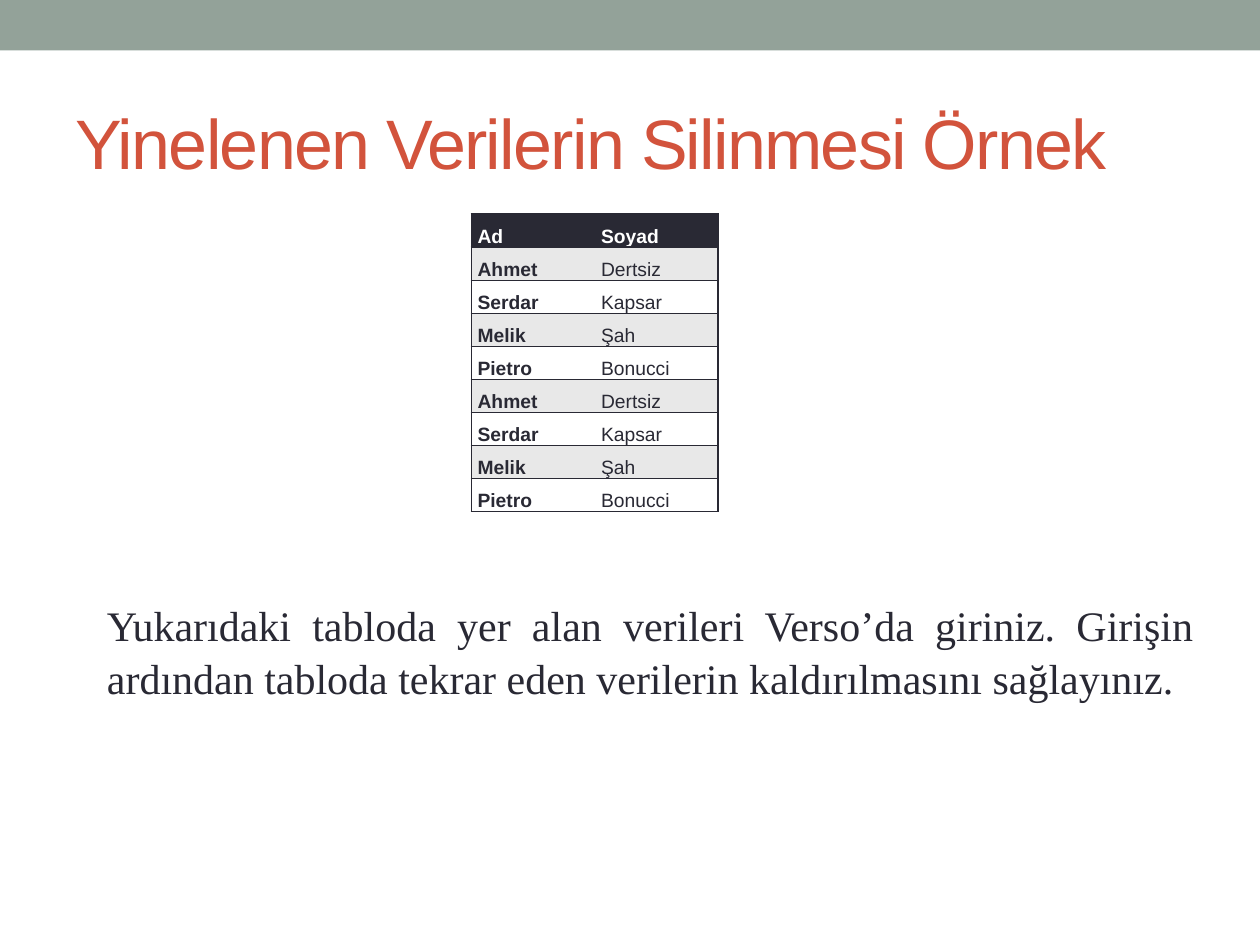
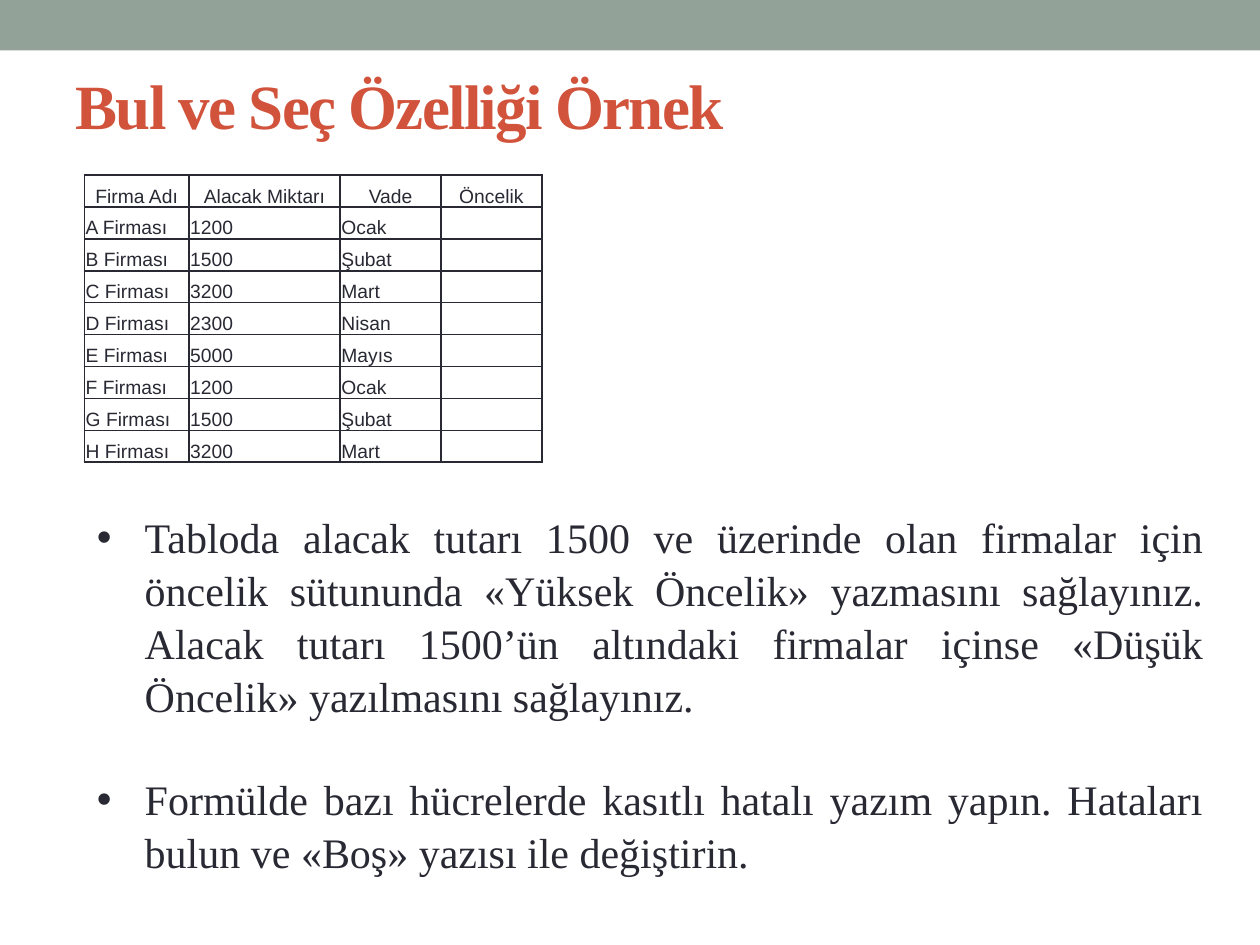
import pptx
import pptx.dml.color
import pptx.enum.shapes
import pptx.enum.text
import pptx.oxml.ns
import pptx.util
from lxml import etree

ANCHOR = pptx.enum.text.MSO_ANCHOR
ALIGN = pptx.enum.text.PP_ALIGN
INK, RUST, SAGE, GREY, WHITE = "292934", "D2533C", "93A299", "E8E8E8", "FFFFFF"
SANS, SERIF = "Arial", "Times New Roman"
NO_STYLE = "{2D5ABB26-0587-4C30-8999-92F81FD0307C}"
CELL_SIZE, BODY_SIZE = 11, 24

PEOPLE = [("Ahmet", "Dertsiz"), ("Serdar", "Kapsar"), ("Melik", "Şah"), ("Pietro", "Bonucci")]
DEBTS = [("1200", "Ocak"), ("1500", "Şubat"), ("3200", "Mart"), ("2300", "Nisan"),
         ("5000", "Mayıs"), ("1200", "Ocak"), ("1500", "Şubat"), ("3200", "Mart")]

SLIDES = [
    {
        "title": "Yinelenen Verilerin Silinmesi Örnek",
        "title_font": {"size": 40, "name": SANS, "color": RUST},
        "title_insets": {"top": 0.05, "bottom": 0.05},
        "rows": [("Ad", "Soyad")] + PEOPLE * 2,
        "table_at": (3.74, 1.7), "cols": (0.98, 0.98), "table_height": 2.36,
        "cell_insets": {"left": 0.05, "right": 0.05, "top": 0, "bottom": 0},
        "banded": True,
        "body_at": (0.75, 4.69, 8.82, 0.91),
        "bullets": False,
        "body": ["Yukarıdaki tabloda yer alan verileri Verso’da giriniz. Girişin ardından "
                 "tabloda tekrar eden verilerin kaldırılmasını sağlayınız."],
    },
    {
        "title": "Bul ve Seç Özelliği Örnek",
        "title_font": {"size": 36, "name": SERIF, "color": RUST, "bold": True},
        "title_insets": {"top": 0, "bottom": 0.58},
        "rows": [("Firma Adı", "Alacak Miktarı", "Vade", "Öncelik")]
                + [(f"{letter} Firması", *debt, "") for letter, debt in zip("ABCDEFGH", DEBTS)],
        "table_at": (0.67, 1.39), "cols": (0.83, 1.2, 0.8, 0.8), "table_height": 2.28,
        "cell_insets": {"left": 0.01, "right": 0.01, "top": 0.01, "bottom": 0},
        "banded": False,
        "body_at": (0.67, 3.99, 8.98, 2.93),
        "bullets": True,
        "body": ["Tabloda alacak tutarı 1500 ve üzerinde olan firmalar için öncelik sütununda "
                 "«Yüksek Öncelik» yazmasını sağlayınız. Alacak tutarı 1500’ün altındaki "
                 "firmalar içinse «Düşük Öncelik» yazılmasını sağlayınız.",
                 "Formülde bazı hücrelerde kasıtlı hatalı yazım yapın. Hataları bulun ve "
                 "«Boş» yazısı ile değiştirin."],
    },
]


def inches(*values):
    return [pptx.util.Inches(v) for v in values]


def rgb(color):
    return pptx.dml.color.RGBColor.from_string(color)


def add_xml(parent, tag, **attrs):
    return etree.SubElement(parent, pptx.oxml.ns.qn(tag), **attrs)


def write(p, text, size, color, **font):
    r = p.add_run()
    r.text = text
    r.font.size = pptx.util.Pt(size)
    r.font.color.rgb = rgb(color)
    for name, value in font.items():
        setattr(r.font, name, value)
    return r


def set_insets(obj, insets):
    for side, value in insets.items():
        setattr(obj, f"margin_{side}", pptx.util.Inches(value))


def add_band(slide, layout):
    """Draw the top band and hand it over to the layout that all slides share."""
    sp = slide.shapes.add_shape(pptx.enum.shapes.MSO_SHAPE.RECTANGLE, *inches(0, 0, 10, 0.4))
    sp.shadow.inherit = False
    sp.fill.solid()
    sp.fill.fore_color.rgb = rgb(SAGE)
    sp.line.fill.background()
    layout.shapes.element.insert(2, sp.element)


def add_title(slide, item):
    sp = slide.shapes.title
    sp.left, sp.top, sp.width, sp.height = inches(0.5, 0.58, 9, 1.08)
    tf = sp.text_frame
    tf.auto_size = pptx.enum.text.MSO_AUTO_SIZE.NONE
    tf.vertical_anchor = ANCHOR.MIDDLE
    set_insets(tf, item["title_insets"])
    p = tf.paragraphs[0]
    p.alignment = ALIGN.LEFT
    r = write(p, item["title"], **item["title_font"])
    r.font._element.set("spc", "-100")


def set_borders(cell, sides):
    """Line the given sides; borders must come before the fill in the cell's XML."""
    tc_pr = cell._tc.get_or_add_tcPr()
    for side in sides:
        ln = add_xml(tc_pr, f"a:ln{side}", w=str(pptx.util.Pt(1)))
        add_xml(add_xml(ln, "a:solidFill"), "a:srgbClr", val=INK)


def fill_cell(cell, text, row, col, item):
    banded, header = item["banded"], row == 0
    last = col == len(item["cols"]) - 1
    left, right = not banded or col == 0, not banded or last
    set_borders(cell, "L" * left + "R" * right + "TB")
    if banded:
        cell.fill.solid()
        cell.fill.fore_color.rgb = rgb(INK if header else GREY if row % 2 else WHITE)
    else:
        cell.fill.background()
    cell.vertical_anchor = ANCHOR.BOTTOM
    set_insets(cell, item["cell_insets"])
    p = cell.text_frame.paragraphs[0]
    if banded:
        p.line_spacing = 1.15
    elif header:
        p.alignment = ALIGN.CENTER
    if text:
        write(p, text, CELL_SIZE, WHITE if banded and header else INK,
              name=SANS, bold=banded and (header or col == 0))
    else:
        add_xml(p._p, "a:endParaRPr", sz=str(CELL_SIZE * 100))


def add_table(slide, item):
    rows, cols = item["rows"], item["cols"]
    frame = slide.shapes.add_table(len(rows), len(cols), *inches(
        *item["table_at"], sum(cols), item["table_height"]))
    table = frame.table
    table.first_row = table.horz_banding = False
    table._tbl.tblPr.find(pptx.oxml.ns.qn("a:tableStyleId")).text = NO_STYLE
    for column, width in zip(table.columns, inches(*cols)):
        column.width = width
    for i, row in enumerate(rows):
        for j, text in enumerate(row):
            fill_cell(table.cell(i, j), text, i, j, item)


def add_body(slide, item):
    tf = slide.shapes.add_textbox(*inches(*item["body_at"])).text_frame
    tf.word_wrap = True
    for i, text in enumerate(item["body"]):
        p = tf.add_paragraph() if i else tf.paragraphs[0]
        p.alignment = ALIGN.JUSTIFY
        p.line_spacing = 1.05
        if i:
            p.space_before = pptx.util.Pt(29)
        if item["bullets"]:
            p_pr = p._p.get_or_add_pPr()
            indent = pptx.util.Inches(0.38)
            p_pr.set("marL", str(indent))
            p_pr.set("indent", str(-indent))
            add_xml(p_pr, "a:buFont", typeface=SANS)
            add_xml(p_pr, "a:buChar", char="•")
        write(p, text, BODY_SIZE, INK, name=SERIF)


def main():
    prs = pptx.Presentation()
    prs.slide_width, prs.slide_height = inches(10, 7.5)
    layout = prs.slide_layouts[5]
    for i, item in enumerate(SLIDES):
        slide = prs.slides.add_slide(layout)
        if i == 0:
            add_band(slide, layout)
        add_title(slide, item)
        add_table(slide, item)
        add_body(slide, item)
    prs.save("out.pptx")


if __name__ == "__main__":
    main()
